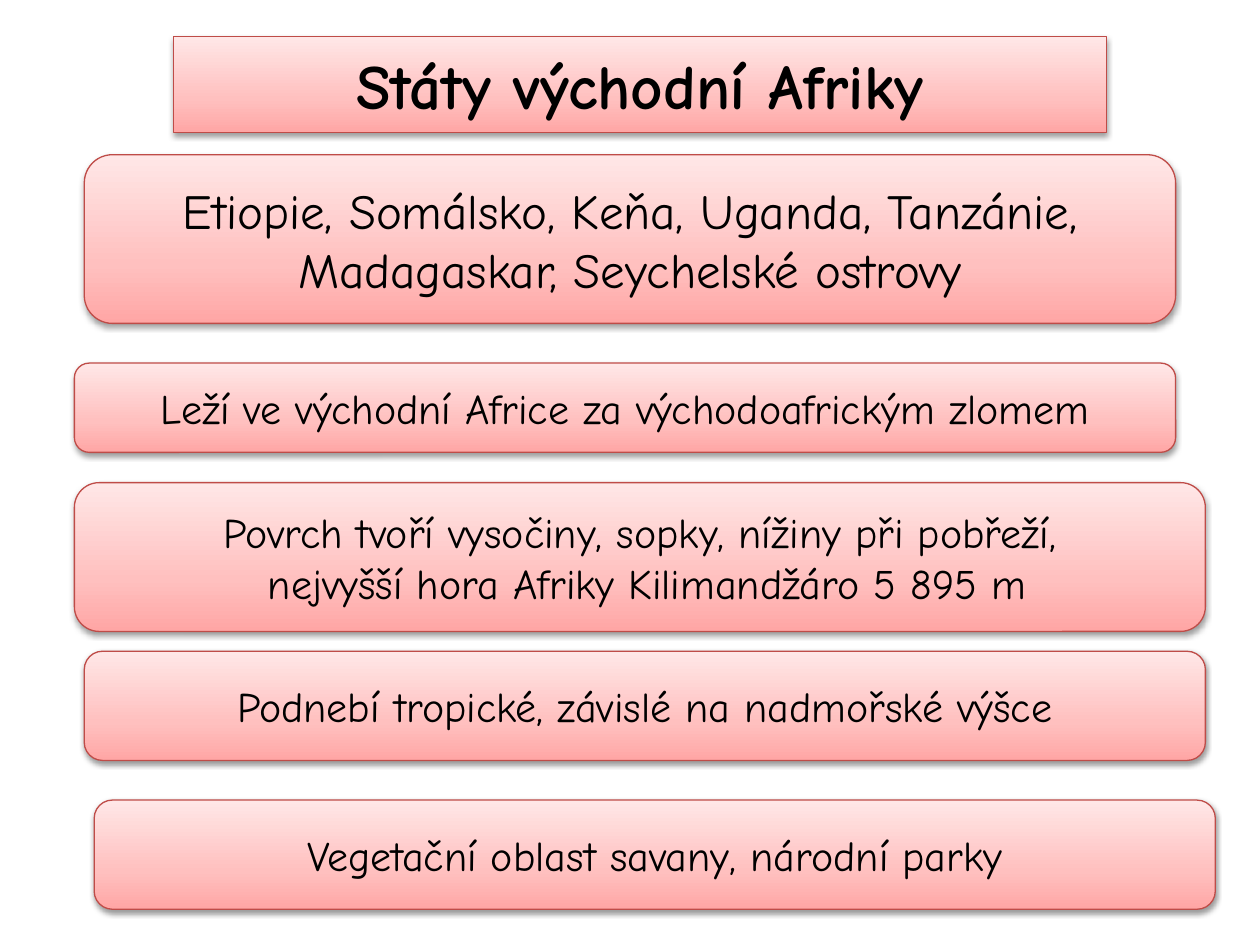
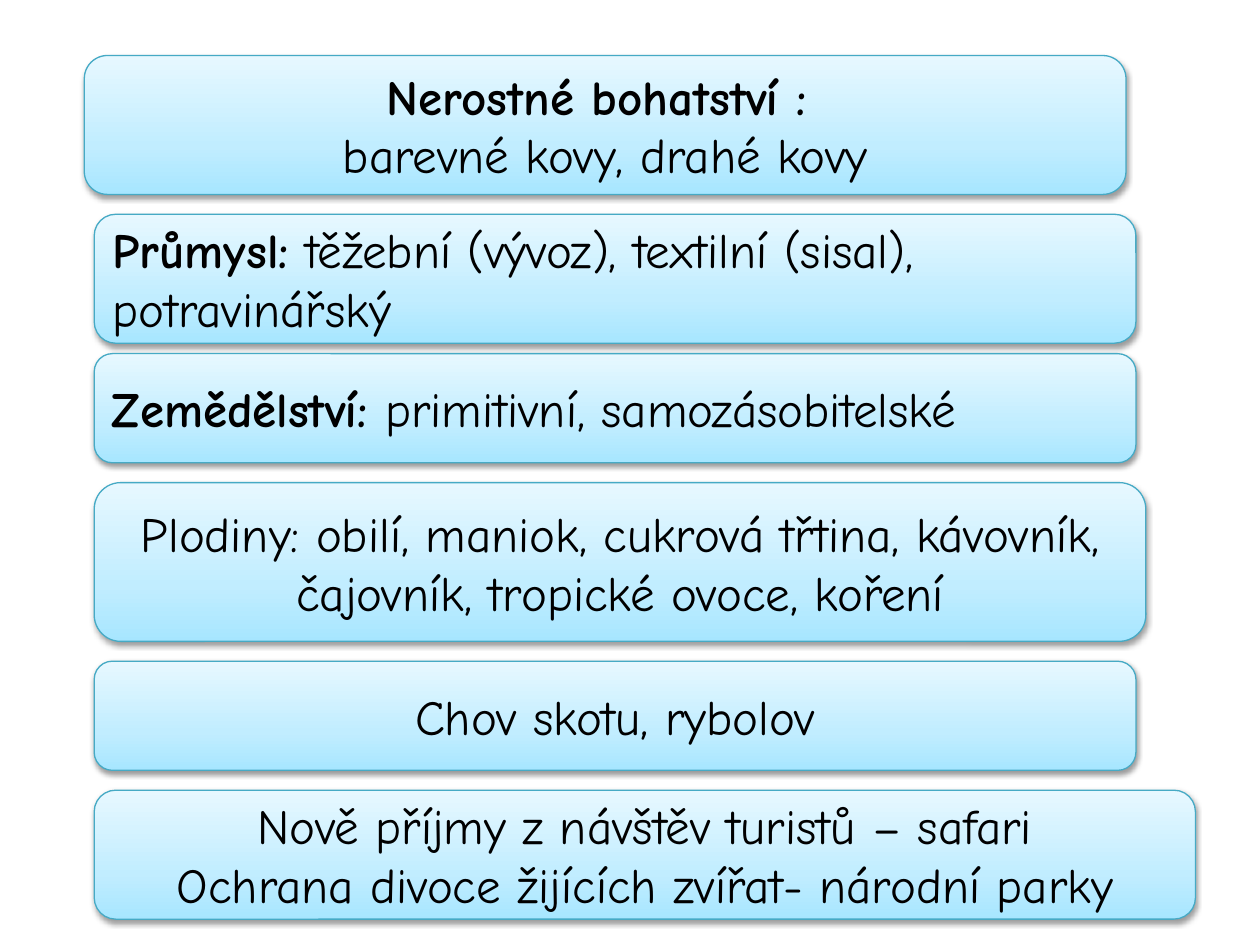
"""Build two slides on the countries of East Africa, their nature and economy."""
import copy

import pptx
import pptx.dml.color
import pptx.enum.shapes
import pptx.enum.text
import pptx.oxml
import pptx.oxml.ns
import pptx.util

Cm = pptx.util.Cm
RGBColor = pptx.dml.color.RGBColor
CENTER = pptx.enum.text.PP_ALIGN.CENTER
LEFT = pptx.enum.text.PP_ALIGN.LEFT
ROUNDED = pptx.enum.shapes.MSO_SHAPE.ROUNDED_RECTANGLE

FONT = "Comic Neue"
BLACK = RGBColor(0x00, 0x00, 0x00)
RED_LINE = RGBColor(0xBF, 0x4C, 0x48)
RED_STOPS = [RGBColor(0xFF, 0xA6, 0xA5), RGBColor(0xFF, 0xC0, 0xBF), RGBColor(0xFF, 0xE7, 0xE7)]
BLUE_LINE = RGBColor(0x46, 0xAA, 0xC5)
BLUE_STOPS = [RGBColor(0xA7, 0xE6, 0xFF), RGBColor(0xC1, 0xED, 0xFF), RGBColor(0xE7, 0xF8, 0xFF)]
STOP_POSITIONS = [0, 0.35, 1]

NAMESPACE = pptx.oxml.ns.nsdecls("a")
ROUNDED_OUTLINE = f'<a:prstGeom {NAMESPACE} prst="roundRect"><a:avLst/></a:prstGeom>'
SHADOW = (
    f'<a:outerShdw {NAMESPACE} blurRad="40000" dist="20000" dir="5400000" rotWithShape="0">'
    '<a:srgbClr val="000000"><a:alpha val="38000"/></a:srgbClr></a:outerShdw>'
)


def style_panel(shape, stop_colors, line_color):
    """Give a panel its gradient, outline and soft shadow."""
    shape.fill.gradient()
    shape.fill.gradient_angle = 90
    stop_list = shape._element.spPr.find(".//" + pptx.oxml.ns.qn("a:gsLst"))
    stop_list.append(copy.deepcopy(stop_list[0]))
    for stop, position, color in zip(shape.fill.gradient_stops, STOP_POSITIONS, stop_colors):
        stop.position = position
        stop.color.rgb = color
    shape.line.color.rgb = line_color
    shape.line.width = pptx.util.Pt(0.75)
    shape.shadow.inherit = False
    effects = shape._element.spPr.find(pptx.oxml.ns.qn("a:effectLst"))
    effects.append(pptx.oxml.parse_xml(SHADOW))


def write_text(shape, paragraphs, size, alignment):
    """Write paragraphs given as lists of (text, bold) runs."""
    frame = shape.text_frame
    frame.word_wrap = True
    frame.auto_size = pptx.enum.text.MSO_AUTO_SIZE.NONE
    frame.vertical_anchor = pptx.enum.text.MSO_ANCHOR.MIDDLE
    for index, runs in enumerate(paragraphs):
        paragraph = frame.add_paragraph() if index else frame.paragraphs[0]
        paragraph.alignment = alignment
        for text, bold in runs:
            run = paragraph.add_run()
            run.text = text
            run.font.name = FONT
            run.font.size = pptx.util.Pt(size)
            run.font.bold = bold
            run.font.color.rgb = BLACK


presentation = pptx.Presentation()
presentation.slide_width = Cm(25.4)
presentation.slide_height = Cm(19.05)

countries_slide = presentation.slides.add_slide(presentation.slide_layouts[5])
economy_slide = presentation.slides.add_slide(presentation.slide_layouts[6])

title = countries_slide.shapes.title
title.left, title.top, title.width, title.height = Cm(3.5), Cm(0.74), Cm(18.8), Cm(1.93)
title._element.spPr.insert(1, pptx.oxml.parse_xml(ROUNDED_OUTLINE))
style_panel(title, RED_STOPS, RED_LINE)
write_text(title, [[("Státy východní Afriky", True)]], 36, CENTER)

country_panels = [
    (1.7, 3.12, 22, 3.4, 28, CENTER,
     [[("Etiopie, Somálsko, Keňa, Uganda, Tanzánie, Madagaskar, Seychelské ostrovy", False)]]),
    (1.5, 7.32, 22.2, 1.8, 24, CENTER,
     [[("Leží ve východní Africe za východoafrickým zlomem", False)]]),
    (1.5, 9.73, 22.8, 3, 24, CENTER,
     [[("Povrch tvoří vysočiny, sopky, nížiny při pobřeží,", False)],
      [(" nejvyšší hora Afriky Kilimandžáro 5 895 m", False)]]),
    (1.7, 13.13, 22.6, 2.2, 24, CENTER,
     [[("Podnebí tropické, závislé na nadmořské výšce", False)]]),
    (1.9, 16.13, 22.6, 2.2, 24, CENTER,
     [[("Vegetační oblast savany, národní parky", False)]]),
]

economy_panels = [
    (1.7, 1.12, 21, 2.8, 28, CENTER,
     [[("Nerostné bohatství : ", True)],
      [("barevné kovy, drahé kovy", False)]]),
    (1.9, 4.32, 21, 2.6, 28, LEFT,
     [[("Průmysl:", True), (" těžební (vývoz), textilní (sisal), potravinářský", False)]]),
    (1.9, 7.13, 21, 2.2, 28, LEFT,
     [[("Zemědělství: ", True), ("primitivní, samozásobitelské", False)]]),
    (1.9, 9.73, 21.2, 3.2, 28, CENTER,
     [[("Plodiny: obilí, maniok, cukrová třtina, kávovník, čajovník, tropické ovoce, koření", False)]]),
    (1.9, 13.33, 21, 2.2, 28, CENTER,
     [[("Chov skotu, rybolov", False)]]),
    (1.9, 15.93, 22.2, 2.6, 28, CENTER,
     [[("Nově příjmy z návštěv turistů – safari", False)],
      [("Ochrana divoce žijících zvířat- národní parky", False)]]),
]

for slide, panels, stop_colors, line_color in [
    (countries_slide, country_panels, RED_STOPS, RED_LINE),
    (economy_slide, economy_panels, BLUE_STOPS, BLUE_LINE),
]:
    for left, top, width, height, size, alignment, paragraphs in panels:
        panel = slide.shapes.add_shape(ROUNDED, Cm(left), Cm(top), Cm(width), Cm(height))
        style_panel(panel, stop_colors, line_color)
        write_text(panel, paragraphs, size, alignment)

presentation.save("out.pptx")
